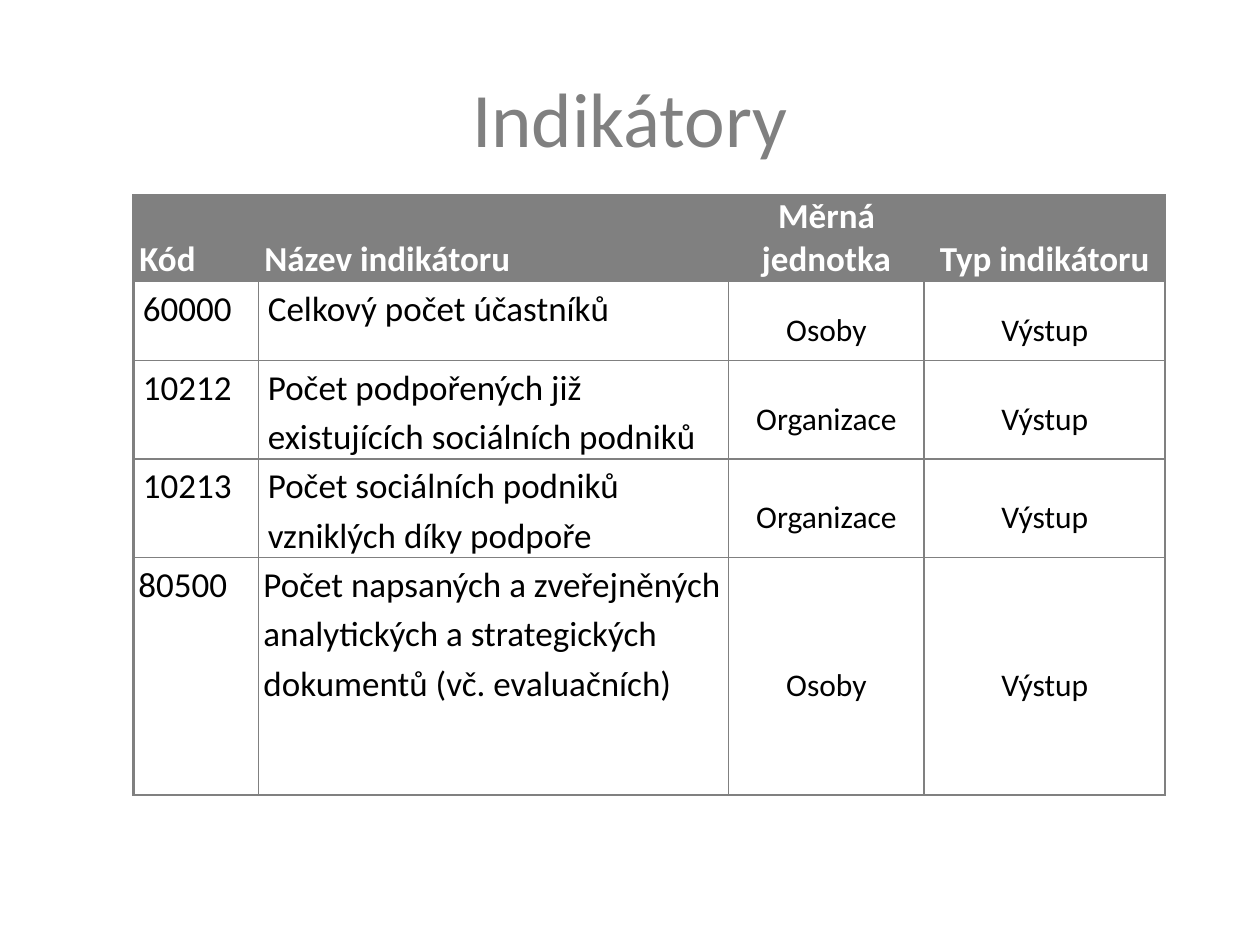
from lxml import etree
from pptx import Presentation
from pptx.dml.color import RGBColor
from pptx.enum.text import MSO_ANCHOR, PP_ALIGN
from pptx.oxml.ns import qn
from pptx.util import Cm, Pt

TOP, MIDDLE, BOTTOM = MSO_ANCHOR.TOP, MSO_ANCHOR.MIDDLE, MSO_ANCHOR.BOTTOM
LEFT, CENTER, JUSTIFY = PP_ALIGN.LEFT, PP_ALIGN.CENTER, PP_ALIGN.JUSTIFY
GRAY = RGBColor(0x80, 0x80, 0x80)
WHITE = RGBColor(0xFF, 0xFF, 0xFF)
BLACK = RGBColor(0, 0, 0)
FONT = "Calibri"

INDICATORS = [
    ("Kód", "Název indikátoru", "Měrná jednotka", "Typ indikátoru"),
    ("60000", "Celkový počet účastníků", "Osoby", "Výstup"),
    ("10212", "Počet podpořených již existujících sociálních podniků", "Organizace", "Výstup"),
    ("10213", "Počet sociálních podniků vzniklých díky podpoře", "Organizace", "Výstup"),
    ("80500", "Počet napsaných a zveřejněných analytických a strategických "
     "dokumentů (vč. evaluačních)", "Osoby", "Výstup"),
]
COLUMN_WIDTHS = [2.52, 9.48, 3.94, 4.86]
ROW_HEIGHTS = [1.52, 1.6, 1.8, 1.7, 4.78]
LAST_ROW = len(ROW_HEIGHTS) - 1
LAST_COLUMN = len(COLUMN_WIDTHS) - 1


def style_text(paragraph, size, color, bold=False):
    for run in paragraph.runs:
        run.font.name = FONT
        run.font.size = Pt(size)
        run.font.bold = bold
        run.font.color.rgb = color


def add_borders(cell, widths):
    properties = cell._tc.get_or_add_tcPr()
    for position, (side, width) in enumerate(widths.items()):
        line = etree.Element(qn(f"a:ln{side}"), w=str(Pt(width)))
        fill = etree.SubElement(line, qn("a:solidFill"))
        etree.SubElement(fill, qn("a:srgbClr"), val=str(GRAY))
        properties.insert(position, line)


prs = Presentation()
prs.slide_width, prs.slide_height = Cm(25.4), Cm(19.05)
slide = prs.slides.add_slide(prs.slide_layouts[5])

title = slide.shapes.title
title.left, title.top, title.width, title.height = Cm(1.27), Cm(0.76), Cm(22.86), Cm(3.18)
title.text_frame.text = "Indikátory"
title.text_frame.vertical_anchor = MIDDLE
title.text_frame.paragraphs[0].alignment = CENTER
style_text(title.text_frame.paragraphs[0], 44, GRAY)

indicators = slide.shapes.add_table(
    len(ROW_HEIGHTS), len(COLUMN_WIDTHS), Cm(2.69), Cm(3.94),
    Cm(sum(COLUMN_WIDTHS)), Cm(sum(ROW_HEIGHTS))).table
indicators.horz_banding = False
for column, width in zip(indicators.columns, COLUMN_WIDTHS):
    column.width = Cm(width)
for row, height in zip(indicators.rows, ROW_HEIGHTS):
    row.height = Cm(height)

for r, texts in enumerate(INDICATORS):
    for c, text in enumerate(texts):
        cell = indicators.cell(r, c)
        cell.text_frame.text = text
        paragraph = cell.text_frame.paragraphs[0]
        is_header, is_description = r == 0, c < 2

        if is_header:
            anchor, margin, before, after = BOTTOM, 0.12, 12, 0
            alignment = JUSTIFY if is_description else CENTER
            spacing = 1.5 if is_description else 1.0
            cell.fill.solid()
            cell.fill.fore_color.rgb = GRAY
            style_text(paragraph, 20, WHITE, bold=True)
        else:
            cell.fill.background()
            style_text(paragraph, 20 if is_description else 18, BLACK)
            if not is_description:
                anchor, margin, before, after = MIDDLE, 0.12, 12, 0
                alignment, spacing = CENTER, 1.5
            else:
                anchor, alignment, spacing = TOP, LEFT, 1.15
                margin, before, after = (0.1, 3, 3) if r == LAST_ROW else (0.19, 0, 6)

        cell.vertical_anchor = anchor
        cell.margin_left = Cm(margin)
        cell.margin_right = Cm(0 if r == LAST_ROW and is_description else margin)
        cell.margin_top = cell.margin_bottom = Cm(0)
        paragraph.alignment = alignment
        paragraph.line_spacing = spacing
        paragraph.space_before, paragraph.space_after = Pt(before), Pt(after)
        add_borders(cell, {
            "L": 1.5 if c == 0 else 1,
            "R": 1.5 if c == LAST_COLUMN else 1,
            "T": 1.5 if is_header else 1,
            "B": 1.5 if r == LAST_ROW else 1,
        })

prs.save("out.pptx")
